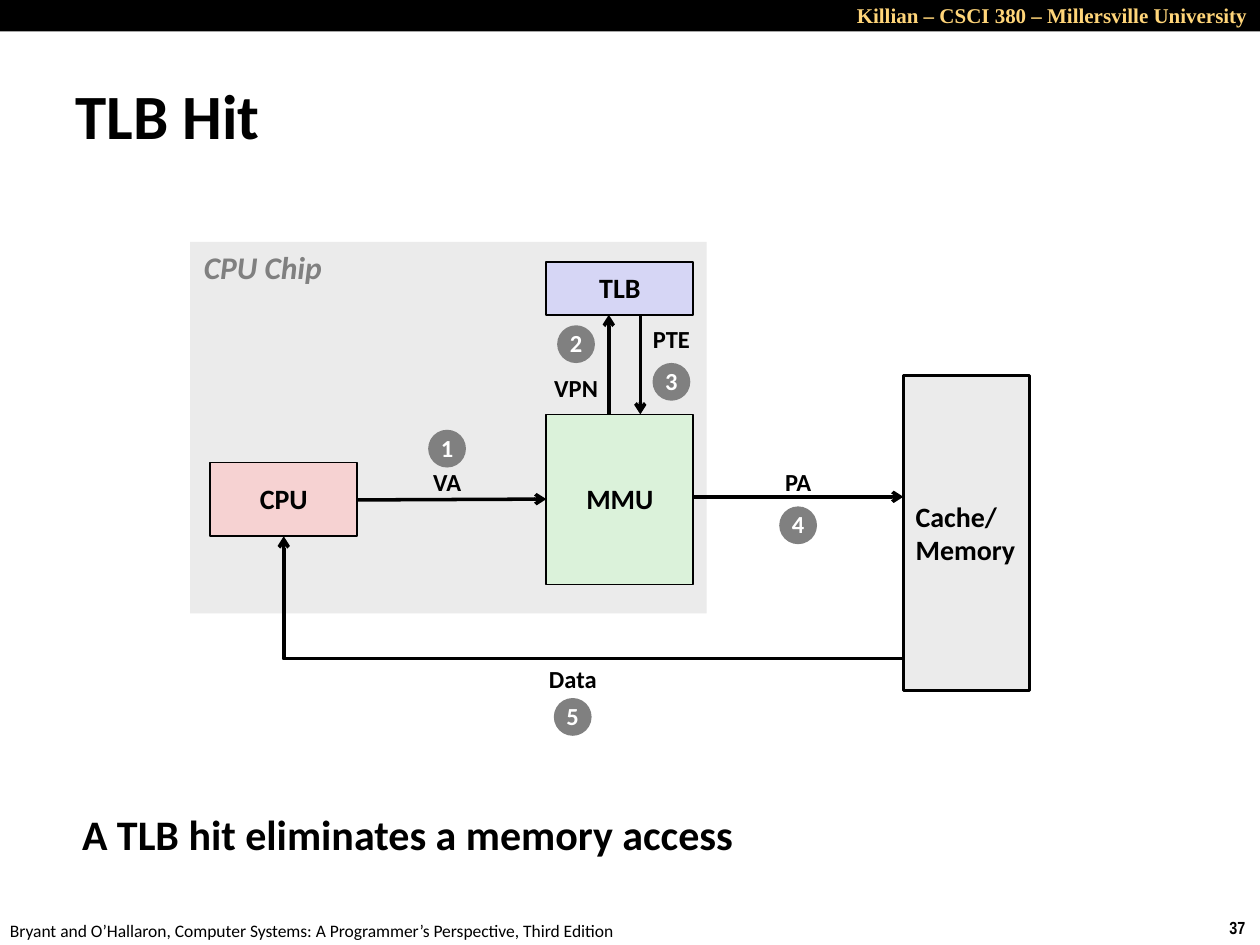
from pptx import Presentation
from pptx.dml.color import RGBColor
from pptx.enum.shapes import MSO_CONNECTOR, MSO_SHAPE
from pptx.enum.text import MSO_ANCHOR, PP_ALIGN
from pptx.oxml.ns import qn
from pptx.util import Pt
from lxml import etree

RECT, OVAL = MSO_SHAPE.RECTANGLE, MSO_SHAPE.OVAL
LINE, BENT = MSO_CONNECTOR.STRAIGHT, MSO_CONNECTOR.ELBOW
LEFT, MID, RIGHT = PP_ALIGN.LEFT, PP_ALIGN.CENTER, PP_ALIGN.RIGHT
TOP, CENTRE = MSO_ANCHOR.TOP, MSO_ANCHOR.MIDDLE

BLACK = RGBColor(0x00, 0x00, 0x00)
WHITE = RGBColor(0xFF, 0xFF, 0xFF)
GOLD = RGBColor(0xFF, 0xD5, 0x79)
GREY = RGBColor(0x80, 0x80, 0x80)
PALE = RGBColor(0xEB, 0xEB, 0xEB)
GREEN = RGBColor(0xDB, 0xF2, 0xDA)
PINK = RGBColor(0xF6, 0xD2, 0xD2)
LILAC = RGBColor(0xD6, 0xD6, 0xF5)

DISC = 21.6
NAME_W, NAME_H = 48, 24
FONT = {"name": "Calibri", "bold": True}


def write(shape, text, size, ink=BLACK, align=MID, anchor=CENTRE, wrap=False,
          space=None, **extra):
    """Put formatted text into a shape."""
    frame = shape.text_frame
    frame.text = text
    frame.word_wrap = wrap
    frame.vertical_anchor = anchor
    look = {**FONT, "size": Pt(size), **extra}
    for para in frame.paragraphs:
        para.alignment = align
        para.line_spacing = space
        for run in para.runs:
            run.font.color.rgb = ink
            for key, value in look.items():
                setattr(run.font, key, value)


def label(slide, box, text, size, **style):
    """Add a text box."""
    shape = slide.shapes.add_textbox(*map(Pt, box))
    write(shape, text, size, **style)


def block(slide, kind, box, fill, edge=0):
    """Add a filled shape, outlined if an edge width is given."""
    shape = slide.shapes.add_shape(kind, *map(Pt, box))
    shape.shadow.inherit = False
    shape.fill.solid()
    shape.fill.fore_color.rgb = fill
    if edge:
        shape.line.color.rgb = BLACK
        shape.line.width = Pt(edge)
    else:
        shape.line.fill.background()
    return shape


def arrow(slide, kind, *ends):
    """Add an arrow between two points; an elbow has one bend."""
    link = slide.shapes.add_connector(kind, *map(Pt, ends))
    link.line.color.rgb = BLACK
    link.line.width = Pt(2)
    props = link.line._get_or_add_ln()
    etree.SubElement(props, qn("a:tailEnd"), type="arrow")
    frame = props.getparent()
    etree.SubElement(frame, qn("a:effectLst"))
    if kind == BENT:
        frame.find(qn("a:prstGeom")).set("prst", "bentConnector2")


def header(slide, box):
    """Draw the course band."""
    left, top, width, height = box
    block(slide, RECT, box, BLACK)
    label(slide, (left + width - 238, top - 2, 238, 21.6),
          "Killian – CSCI 380 – Millersville University", 12, ink=GOLD,
          align=RIGHT, anchor=TOP, wrap=True, name="Times New Roman")


def footer(slide, box):
    """Write the book credit and the page number."""
    left, top, width, height = box
    label(slide, (left - 1.4, top + 1.4, 366, height),
          "Bryant and O’Hallaron, Computer Systems: "
          "A Programmer’s Perspective, Third Edition",
          10, align=LEFT, anchor=TOP, bold=False)
    label(slide, (left + width - 24.5, top, 24.5, height), "37", 10,
          align=LEFT, anchor=TOP, name="Arial Narrow")


def title(slide, box):
    """Place and fill the title."""
    shape = slide.shapes.title
    for key, value in zip(("left", "top", "width", "height"), box):
        setattr(shape, key, Pt(value))
    write(shape, "TLB Hit", 36, align=LEFT, wrap=True)


def parts(slide, left, top):
    """Draw the chip and the hardware units."""
    block(slide, RECT, (left, top, 295.2, 212.4), PALE)
    label(slide, (left + 0.7, top, 83.5, 29), "CPU Chip", 18, ink=GREY,
          align=LEFT, anchor=TOP, italic=True)
    units = (
        ("MMU", 203.5, 98.6, 84, 97.2, GREEN, 1, MID, 0.98),
        ("Cache/\nMemory", 407.5, 76.4, 72, 180, PALE, 1.5, LEFT, None),
        ("CPU", 11.5, 126.2, 84, 42, PINK, 1, MID, 0.98),
        ("TLB", 203.5, 11.7, 84, 30, LILAC, 1, MID, 0.98),
    )
    for text, x, y, width, height, fill, edge, align, space in units:
        shape = block(slide, RECT, (left + x, top + y, width, height), fill, edge)
        write(shape, text, 16, align=align, space=space)


def steps(slide, left, top):
    """Draw the numbered transfers, each with arrow, name and disc."""
    flow = (
        ("VA", 146.8, 138, 118.2, LINE, (95.5, 147.5, 203.5, 147)),
        ("VPN", 220.5, 84, 58.5, LINE, (239.2, 98.6, 239.2, 41.7)),
        ("PTE", 275, 55.8, 80, LINE, (257.2, 41.7, 257.2, 98.6)),
        ("PA", 347.4, 138, 162, LINE, (287.5, 145.7, 407.5, 145.7)),
        ("Data", 218.6, 250.2, 271.5, BENT, (407.5, 238.2, 53.5, 168.3)),
    )
    for count, (text, x, name_y, disc_y, kind, ends) in enumerate(flow, 1):
        x1, y1, x2, y2 = ends
        arrow(slide, kind, left + x1, top + y1, left + x2, top + y2)
        label(slide, (left + x - NAME_W / 2, top + name_y - NAME_H / 2,
                      NAME_W, NAME_H), text, 14, space=0.98)
        disc = block(slide, OVAL, (left + x - DISC / 2, top + disc_y - DISC / 2,
                                   DISC, DISC), GREY)
        write(disc, str(count), 14, ink=WHITE, space=0.98)


def main():
    """Build and save the slide."""
    deck = Presentation()
    deck.slide_width, deck.slide_height = Pt(720), Pt(540)
    slide = deck.slides.add_slide(deck.slide_layouts[5])
    header(slide, (0, 0, 720, 18))
    footer(slide, (0, 520.6, 720, 19.4))
    title(slide, (36, 34.6, 686, 62))
    parts(slide, 108.7, 138.2)
    steps(slide, 108.7, 138.2)
    label(slide, (39.8, 458.6, 566, 45.4),
          "A TLB hit eliminates a memory access", 24,
          align=LEFT, anchor=TOP, wrap=True)
    deck.save("out.pptx")


if __name__ == "__main__":
    main()
